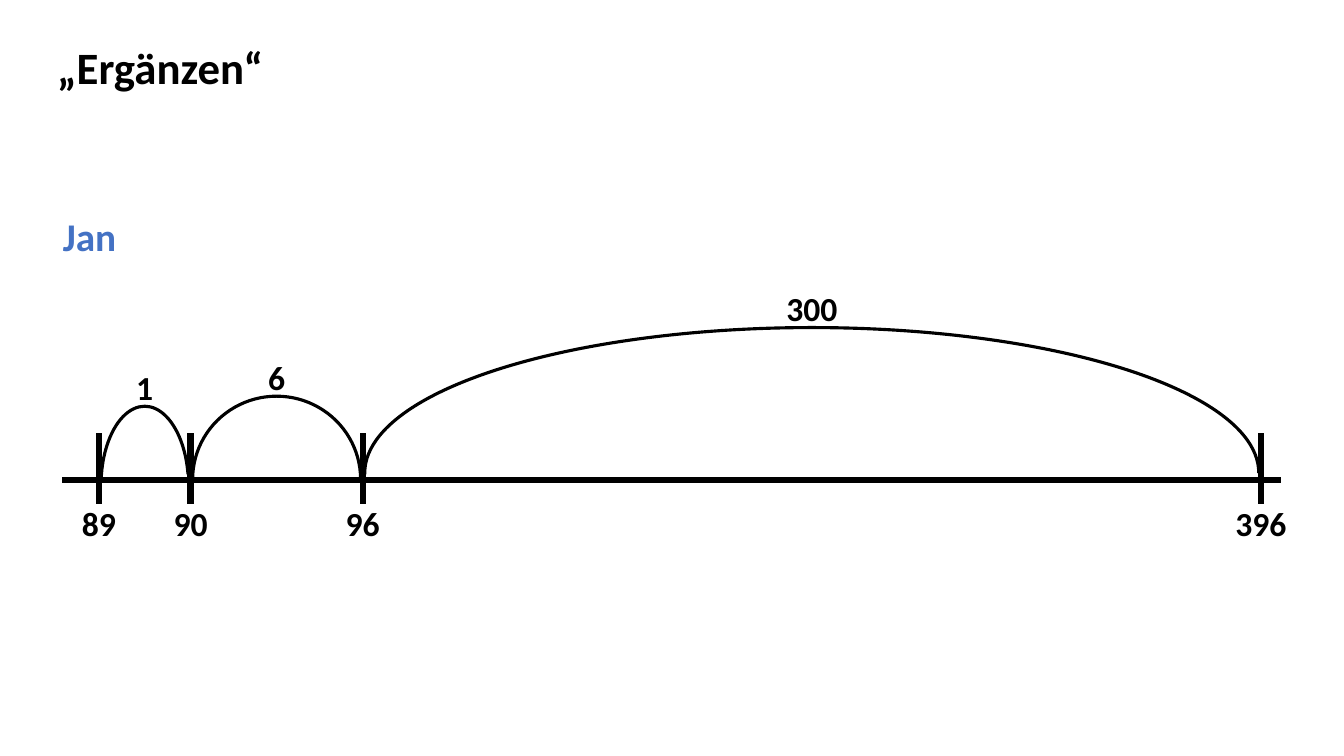
from pptx import Presentation
from pptx.dml.color import RGBColor
from pptx.enum.shapes import MSO_CONNECTOR, MSO_SHAPE
from pptx.enum.text import MSO_AUTO_SIZE, PP_ALIGN
from pptx.oxml.ns import qn
from pptx.util import Pt
from lxml import etree

STRAIGHT = MSO_CONNECTOR.STRAIGHT
ARC = MSO_SHAPE.ARC
LEFT, CENTER = PP_ALIGN.LEFT, PP_ALIGN.CENTER
FIT = MSO_AUTO_SIZE.SHAPE_TO_FIT_TEXT

COLORS = {"ink": "000000", "name": "4472C4"}
FONT = "Calibri"
AXIS_Y = 342.7
LABEL_Y = 356
GAP = 1.5  # space between a tick and the foot of a jump

# number, x, label width
TICKS = [("89", 70.7, 42.5), ("90", 136.1, 42.5),
         ("96", 259.1, 42.5), ("396", 900.7, 55.4)]
# step, top, height of the full ellipse, start and end angle in degrees
JUMPS = [("1", 290.2, 112.3, 189.3, 346.3),
         ("6", 283, 118.8, 178.8, 359.4),
         ("300", 234, 207.4, 179.8, 0.03)]


def color(key):
    return RGBColor.from_string(COLORS[key])


def add_line(slide, x1, y1, x2, y2):
    line = slide.shapes.add_connector(STRAIGHT, Pt(x1), Pt(y1), Pt(x2), Pt(y2))
    line.line.color.rgb = color("ink")
    line.line.width = Pt(4.5)
    props = line._element.find(qn("p:spPr"))
    etree.SubElement(props, qn("a:effectLst"))


def add_text(slide, text, x, y, w, h, size=24, align=CENTER, key="ink"):
    box = slide.shapes.add_textbox(Pt(x), Pt(y), Pt(w), Pt(h))
    frame = box.text_frame
    frame.word_wrap = True
    frame.auto_size = FIT
    frame.text = text
    para = frame.paragraphs[0]
    para.alignment = align
    font = para.runs[0].font
    font.name, font.size, font.bold = FONT, Pt(size), True
    font.color.rgb = color(key)


def add_label(slide, text, mid, y, w):
    """Put a number centred on the position mid."""
    add_text(slide, text, mid - w / 2, y, w, 36)


def add_tick(slide, text, x, w):
    add_line(slide, x, 309.6, x, 360)
    add_label(slide, text, x, LABEL_Y, w)


def add_jump(slide, left, right, text, top, height, start, end):
    """Draw an arc between two ticks with its step above it."""
    arc = slide.shapes.add_shape(ARC, Pt(left + GAP), Pt(top),
                                 Pt(right - left - 2 * GAP), Pt(height))
    arc.shadow.inherit = False
    arc.fill.background()
    arc.line.color.rgb = color("ink")
    arc.line.width = Pt(2.25)
    # angles are stored in 60000ths, adjustments in 100000ths
    arc.adjustments[0] = start * 0.6
    arc.adjustments[1] = end * 0.6
    add_label(slide, text, (left + right) / 2, top - 31.6, 62)


def main():
    deck = Presentation()
    deck.slide_width, deck.slide_height = Pt(960), Pt(540)
    slide = deck.slides.add_slide(deck.slide_layouts[6])

    add_line(slide, 44.6, AXIS_Y, 915.1, AXIS_Y)
    for tick in TICKS:
        add_tick(slide, *tick)
    for start, end, jump in zip(TICKS, TICKS[1:], JUMPS):
        add_jump(slide, start[1], end[1], *jump)

    add_text(slide, "„Ergänzen“", 33.8, 24.5, 270.7, 46, 32, LEFT)
    add_text(slide, "Jan", 37.9, 148.3, 76.5, 41, 28, LEFT, "name")
    deck.save("out.pptx")


if __name__ == "__main__":
    main()
